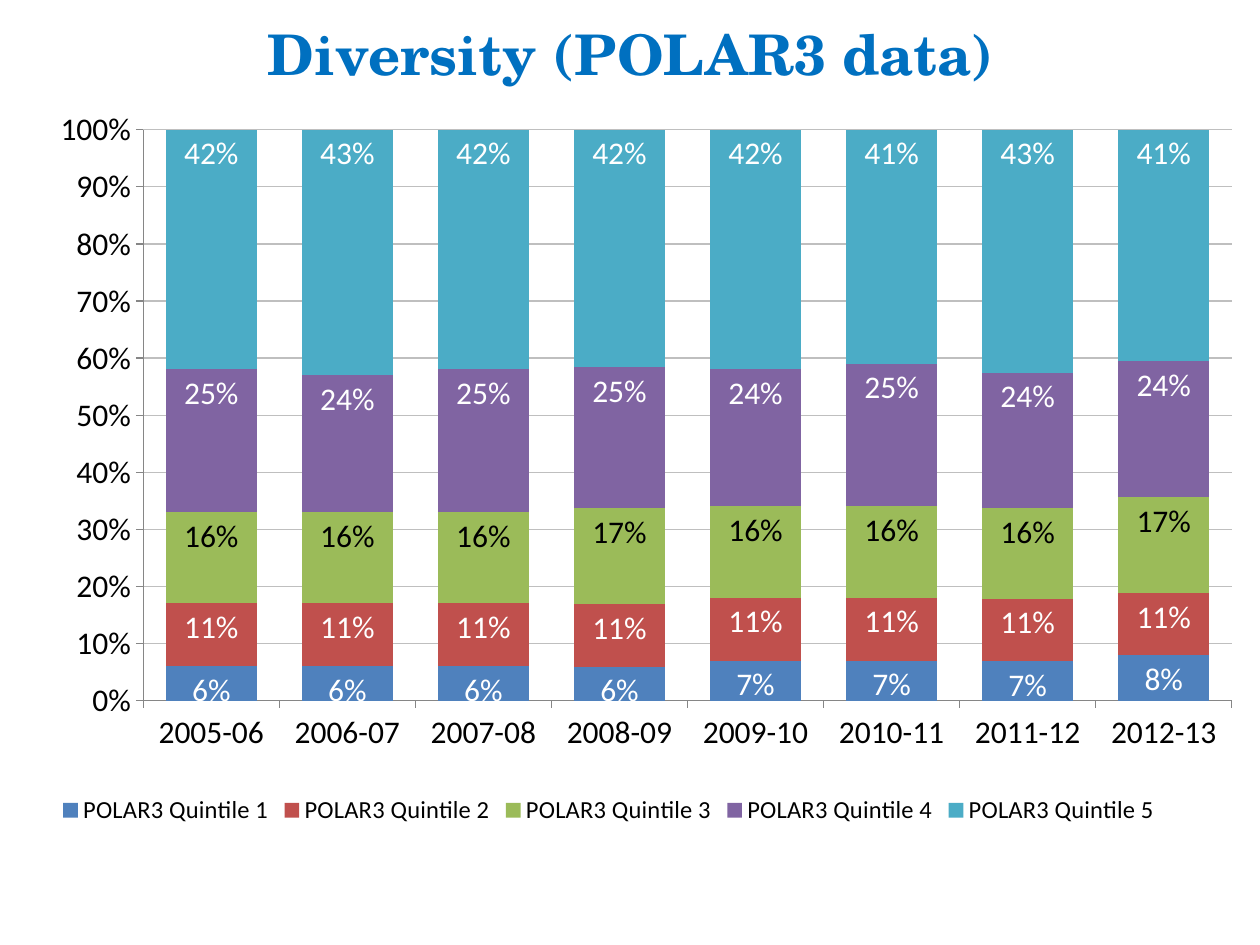
from dataclasses import dataclass

from lxml import etree
from pptx import Presentation
from pptx.chart.data import CategoryChartData
from pptx.dml.color import RGBColor
from pptx.enum import chart as chart_enum, text
from pptx.oxml import ns
from pptx.util import Inches, Pt

COLOURS = {
    "title": "0070C0",
    "black": "000000",
    "white": "FFFFFF",
    "grid": "BFBFBF",
    "axis": "868686",
}
YEARS = [f"{year}-{(year + 1) % 100:02d}" for year in range(2005, 2013)]


@dataclass
class Quintile:
    number: int
    percentages: list[int]
    fill: str
    label: str = "white"


QUINTILES = [
    Quintile(1, [6, 6, 6, 6, 7, 7, 7, 8], "4F81BD"),
    Quintile(2, [11] * 8, "C0504D"),
    Quintile(3, [16, 16, 16, 17, 16, 16, 16, 17], "9BBB59", "black"),
    Quintile(4, [25, 24, 25, 25, 24, 25, 24, 24], "8064A2"),
    Quintile(5, [42, 43, 42, 42, 42, 41, 43, 41], "4BACC6"),
]


def format_font(font, *, size: float, colour: str, name: str = "Calibri", bold: bool = False) -> None:
    font.name, font.size, font.bold = name, Pt(size), bold
    font.color.rgb = RGBColor.from_string(COLOURS[colour])


def write_text(shape, words: str, **font_format) -> None:
    frame = shape.text_frame
    frame.word_wrap = True
    frame.vertical_anchor = text.MSO_ANCHOR.MIDDLE
    paragraph = frame.paragraphs[0]
    paragraph.alignment = text.PP_ALIGN.CENTER
    run = paragraph.add_run()
    run.text = words
    format_font(run.font, **font_format)


def format_line(line, colour: str) -> None:
    line.color.rgb = RGBColor.from_string(COLOURS[colour])
    line.width = Pt(0.75)


def place_plot(chart, left: float, top: float, width: float, height: float) -> None:
    """Fix the inner plot area, in fractions of the chart."""
    plot_area = chart._chartSpace.find(".//" + ns.qn("c:plotArea"))
    for old_layout in plot_area.findall(ns.qn("c:layout")):
        plot_area.remove(old_layout)
    layout = etree.Element(ns.qn("c:layout"))
    manual = etree.SubElement(layout, ns.qn("c:manualLayout"))
    settings = {"layoutTarget": "inner", "xMode": "edge", "yMode": "edge",
                "x": left, "y": top, "w": width, "h": height}
    for tag, value in settings.items():
        etree.SubElement(manual, ns.qn(f"c:{tag}")).set("val", str(value))
    plot_area.insert(0, layout)


def format_series(series, quintile: Quintile) -> None:
    series.format.fill.solid()
    series.format.fill.fore_color.rgb = RGBColor.from_string(quintile.fill)
    series.invert_if_negative = False
    labels = series.data_labels
    labels.show_value = True
    labels.position = chart_enum.XL_LABEL_POSITION.INSIDE_END
    labels.number_format = "0%"
    labels.number_format_is_linked = False
    format_font(labels.font, size=18, colour=quintile.label)


def add_quintile_chart(slide) -> None:
    data = CategoryChartData(number_format="0%")
    data.categories = YEARS
    for quintile in QUINTILES:
        data.add_series(f"POLAR3 Quintile {quintile.number}",
                        [value / 100 for value in quintile.percentages])
    chart = slide.shapes.add_chart(
        chart_enum.XL_CHART_TYPE.COLUMN_STACKED_100,
        Inches(-0.27), Inches(0.84), Inches(10.2), Inches(5.75), data).chart
    chart.has_title = False
    format_font(chart.font, size=18, colour="black")
    place_plot(chart, 0.138, 0.033, 0.847, 0.788)

    # Columns
    plot = chart.plots[0]
    plot.gap_width, plot.overlap = 50, 100
    plot.vary_by_categories = False
    for series, quintile in zip(plot.series, QUINTILES):
        format_series(series, quintile)

    # Axes
    for axis in (chart.category_axis, chart.value_axis):
        axis.major_tick_mark = chart_enum.XL_TICK_MARK.OUTSIDE
        axis.minor_tick_mark = chart_enum.XL_TICK_MARK.NONE
        format_line(axis.format.line, "axis")
        format_font(axis.tick_labels.font, size=18, colour="black")
    value_axis = chart.value_axis
    value_axis.minimum_scale, value_axis.maximum_scale = 0, 1
    value_axis.major_unit = 0.1
    value_axis.tick_labels.number_format = "0%"
    value_axis.tick_labels.number_format_is_linked = False
    value_axis.has_major_gridlines = True
    format_line(value_axis.major_gridlines.format.line, "grid")

    # Legend
    chart.has_legend = True
    chart.legend.position = chart_enum.XL_LEGEND_POSITION.BOTTOM
    chart.legend.include_in_layout = False
    format_font(chart.legend.font, size=14, colour="black")


def main() -> None:
    presentation = Presentation()
    presentation.slide_width, presentation.slide_height = Inches(10), Inches(7.5)
    slide = presentation.slides.add_slide(presentation.slide_layouts[5])

    # Title
    title = slide.shapes.title
    title.left, title.top = Inches(0.51), Inches(0)
    title.width, title.height = Inches(9), Inches(0.84)
    write_text(title, "Diversity (POLAR3 data)", size=32, colour="title",
               name="TeX Gyre Schola", bold=True)

    # Chart
    add_quintile_chart(slide)
    presentation.save("out.pptx")


if __name__ == "__main__":
    main()
